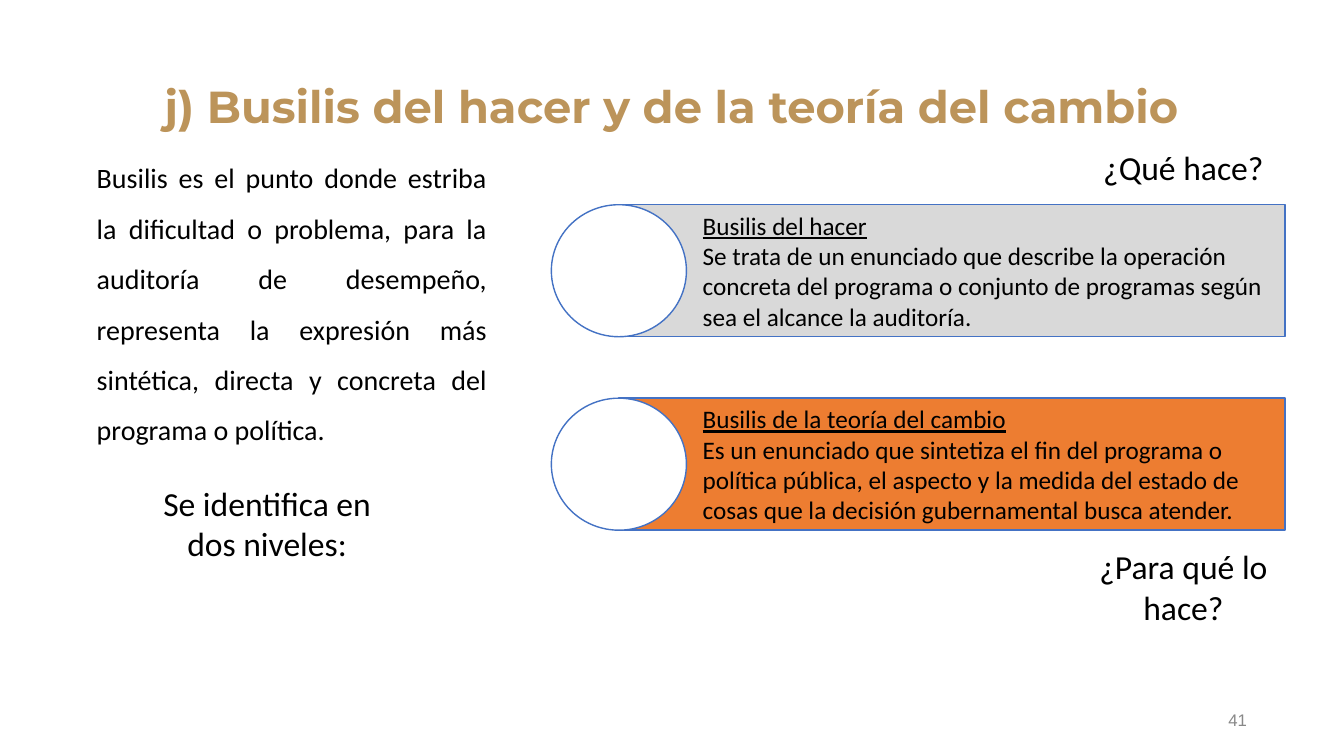
"""Build the slide on the two levels of the busilis."""
from pptx import Presentation
from pptx.dml.color import RGBColor
from pptx.enum import shapes, text
from pptx.util import Pt

TITLE = "j) Busilis del hacer y de la teoría del cambio"
INTRO = ("Busilis es el punto donde estriba la dificultad o problema, para la "
         "auditoría de desempeño, representa la expresión más sintética, "
         "directa y concreta del programa o política.")
CARDS = [
    ("Busilis del hacer",
     "Se trata de un enunciado que describe la operación concreta del programa "
     "o conjunto de programas según sea el alcance la auditoría.", "D9D9D9"),
    ("Busilis de la teoría del cambio",
     "Es un enunciado que sintetiza el fin del programa o política pública, el "
     "aspecto y la medida del estado de cosas que la decisión gubernamental "
     "busca atender.", "ED7D31"),
]
NOTES = [
    ("Se identifica en dos niveles:", (97.2, 341.3, 187.2, 65.5)),
    ("¿Qué hace?", (772.6, 101.5, 145.4, 36)),
    ("¿Para qué lo hace?", (772.6, 386.6, 145.4, 65.5)),
]
LEFT, TOP, WIDE, HIGH, STEP = 442.1, 146.2, 475.9, 94.3, 138.2
DISC = 96.5
INSET = 3.6
ALIGN = text.PP_ALIGN
ANCHOR = text.MSO_ANCHOR


def tint(code):
    return RGBColor.from_string(code)


def write(shape, *lines, size=24, font="Calibri", color="000000", bold=False,
          align=ALIGN.CENTER, anchor=ANCHOR.TOP, space=None, inset=None,
          wrap=True, indent=0, head=False):
    """Fill a shape with one formatted paragraph per line."""
    frame = shape.text_frame
    frame.word_wrap = wrap
    frame.auto_size = text.MSO_AUTO_SIZE.NONE
    frame.vertical_anchor = anchor
    if inset is not None:
        frame.margin_left = frame.margin_right = Pt(inset)
        frame.margin_top = frame.margin_bottom = Pt(inset)
    for num, line in enumerate(lines):
        para = frame.add_paragraph() if num else frame.paragraphs[0]
        para.alignment = align
        if space:
            para.line_spacing = space
        if indent:
            props = para._p.get_or_add_pPr()
            props.set("marL", str(Pt(indent)))
            props.set("indent", "0")
        run = para.add_run()
        run.text = line
        run.font.size = Pt(size)
        run.font.name = font
        run.font.bold = bold
        run.font.underline = head and num == 0
        run.font.color.rgb = tint(color)


def box(slide, place):
    return slide.shapes.add_textbox(*map(Pt, place))


def draw(slide, kind, place, fill):
    shape = slide.shapes.add_shape(kind, *map(Pt, place))
    shape.shadow.inherit = False
    shape.fill.solid()
    shape.fill.fore_color.rgb = tint(fill)
    shape.line.color.rgb = tint("4472C4")
    shape.line.width = Pt(1)
    return shape


def main():
    deck = Presentation()
    deck.slide_width, deck.slide_height = Pt(960), Pt(540)
    slide = deck.slides.add_slide(deck.slide_layouts[5])

    title = slide.shapes.title
    title.left, title.top = Pt(65.5), Pt(40.3)
    title.width, title.height = Pt(828.7), Pt(58.3)
    write(title, TITLE, size=32, font="Montserrat", color="BC945A", bold=True,
          anchor=ANCHOR.BOTTOM, space=0.9, inset=INSET)

    write(box(slide, (873.4, 504, 20.9, 20.9)), "41", size=12, font="Arial",
          color="888888", align=ALIGN.RIGHT, anchor=ANCHOR.MIDDLE,
          inset=INSET, wrap=False)
    write(box(slide, (65.5, 99.4, 285.8, 225.4)), INTRO, size=20,
          align=ALIGN.JUSTIFY, space=1.5, inset=INSET)

    for row, (name, body, fill) in enumerate(CARDS):
        top = TOP + row * STEP
        card = draw(slide, shapes.MSO_SHAPE.RECTANGLE,
                    (LEFT, top, WIDE, HIGH), fill)
        write(card, name, body, size=18, align=ALIGN.LEFT,
              anchor=ANCHOR.MIDDLE, inset=INSET, indent=56.2, head=True)
        draw(slide, shapes.MSO_SHAPE.OVAL,
             (LEFT - DISC / 2, top, DISC, HIGH), "FFFFFF")

    for note, place in NOTES:
        write(box(slide, place), note)

    deck.save("out.pptx")


if __name__ == "__main__":
    main()
